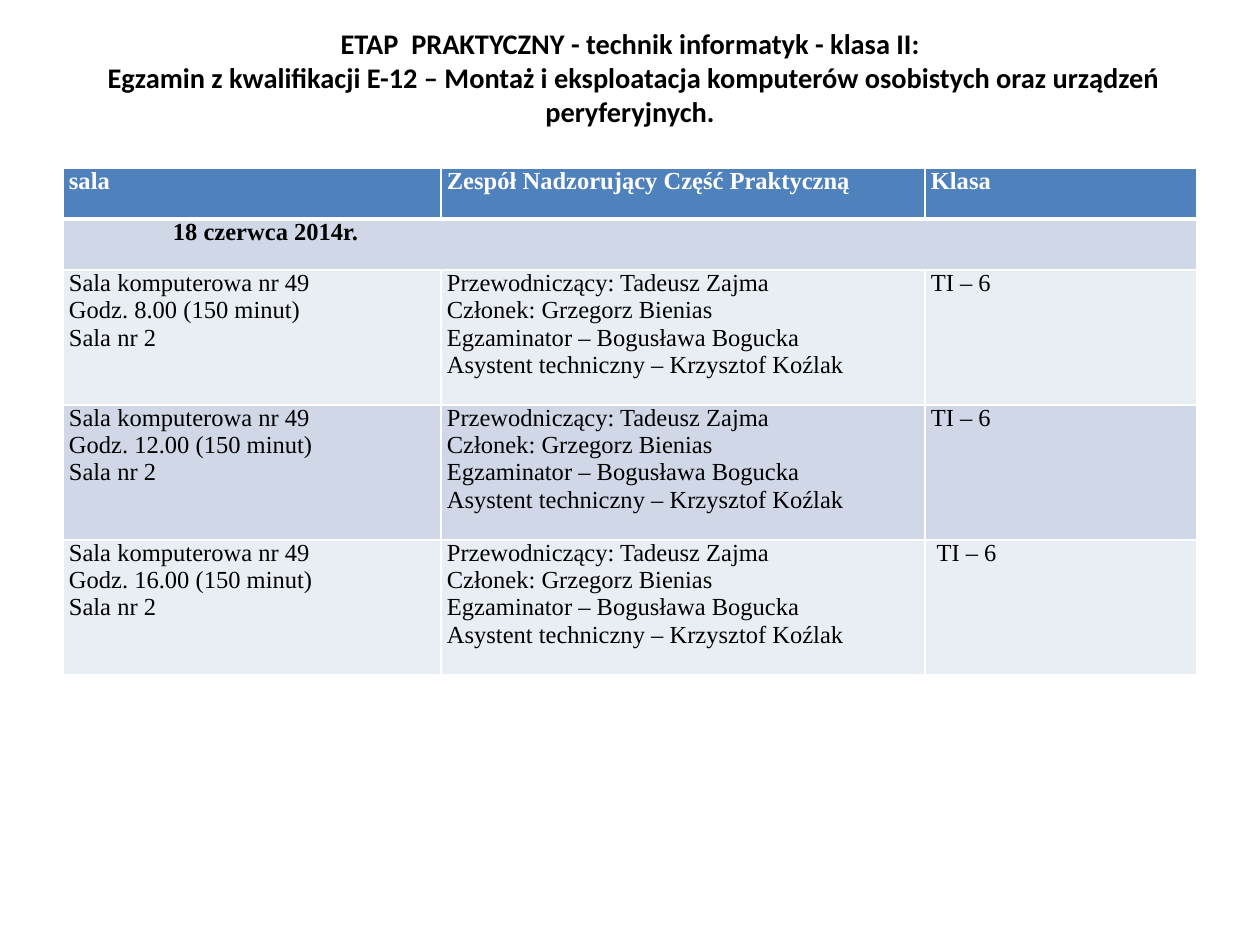
from lxml.etree import SubElement
from pptx import Presentation
from pptx.dml.color import RGBColor
from pptx.enum.text import MSO_ANCHOR, MSO_AUTO_SIZE, PP_ALIGN
from pptx.oxml.ns import qn
from pptx.util import Emu, Pt

PX = 914400 // 126  # EMU in one px
WHITE, BLACK, BLUE = "FFFFFF", "000000", "4F81BD"
DARK_BAND, LIGHT_BAND = "D0D8E8", "E9EDF4"


def px(length):
    return Emu(length * PX)


def color(value):
    return RGBColor.from_string(value)


def write(frame, text, font, size, ink=BLACK, bold=False, align=PP_ALIGN.LEFT):
    """Put each line of text in a paragraph of its own."""
    frame.text = text
    frame.word_wrap = True
    for para in frame.paragraphs:
        para.alignment = align
        for span in para.runs:
            span.font.name = font
            span.font.size = Pt(size)
            span.font.bold = bold
            span.font.color.rgb = color(ink)


def set_border(cell, side, width, ink=WHITE):
    line = SubElement(cell._tc.get_or_add_tcPr(), qn(f"a:ln{side}"), w=str(Pt(width)))
    fill = SubElement(line, qn("a:solidFill"))
    SubElement(fill, qn("a:srgbClr"), val=ink)


class ExamSlide:
    title_font, table_font = "Calibri", "Times New Roman"
    title_size, table_size = 16.2, 14

    def __init__(self, deck):
        self.page = deck.slides.add_slide(deck.slide_layouts[5])

    def title(self, text, left, top, width, height, space_below):
        box = self.page.shapes.title
        box.left, box.top, box.width, box.height = map(px, (left, top, width, height))
        frame = box.text_frame
        frame.auto_size = MSO_AUTO_SIZE.NONE
        frame.vertical_anchor = MSO_ANCHOR.MIDDLE
        frame.margin_top, frame.margin_bottom = 0, px(space_below)
        write(frame, text, self.title_font, self.title_size, bold=True, align=PP_ALIGN.CENTER)

    def table(self, left, top, columns, rows):
        frame = self.page.shapes.add_table(
            len(rows), len(columns), px(left), px(top), px(sum(columns)), px(sum(rows)))
        table = frame.table
        for column, width in zip(table.columns, columns):
            column.width = px(width)
        for row, height in zip(table.rows, rows):
            row.height = px(height)
        return table

    def cell(self, cell, text, fill, ink=BLACK, bold=False, indent=6, top_line=1, bottom_line=1):
        write(cell.text_frame, text, self.table_font, self.table_size, ink, bold)
        cell.margin_left, cell.margin_right = px(indent), px(6)
        cell.margin_top = cell.margin_bottom = 0
        for side, width in zip("LRTB", (1, 1, top_line, bottom_line)):
            set_border(cell, side, width)
        cell.fill.solid()
        cell.fill.fore_color.rgb = color(fill)


def main():
    deck = Presentation()
    deck.slide_width, deck.slide_height = px(1260), px(945)
    slide = ExamSlide(deck)

    # Title
    slide.title(
        "ETAP  PRAKTYCZNY - technik informatyk - klasa II:\n"
        " Egzamin z kwalifikacji E-12 – Montaż i eksploatacja komputerów osobistych "
        "oraz urządzeń peryferyjnych.",
        63, 38, 1134, 158, space_below=80)

    # Table header
    table = slide.table(63, 168, columns=(378, 484, 272), rows=(51, 51, 135, 135, 135))
    headings = ("sala", "Zespół Nadzorujący Część Praktyczną", "Klasa")
    for column, heading in enumerate(headings):
        slide.cell(table.cell(0, column), heading, BLUE, WHITE, bold=True, bottom_line=3)

    # Date across all columns
    table.cell(1, 0).merge(table.cell(1, 2))
    for column, date in enumerate(("18 czerwca 2014r.", "", "")):
        slide.cell(table.cell(1, column), date, DARK_BAND, bold=True, indent=110, top_line=3)

    # Exam sessions
    team = ("Przewodniczący: Tadeusz Zajma\nCzłonek: Grzegorz Bienias\n"
            "Egzaminator – Bogusława Bogucka\nAsystent techniczny – Krzysztof Koźlak")
    sessions = (("8.00", "TI – 6"), ("12.00", "TI – 6"), ("16.00", " TI – 6"))
    for row, (hour, group) in enumerate(sessions, start=2):
        room = f"Sala komputerowa nr 49\nGodz. {hour} (150 minut)\nSala nr 2"
        band = DARK_BAND if row % 2 else LIGHT_BAND
        for column, text in enumerate((room, team, group)):
            slide.cell(table.cell(row, column), text, band)

    deck.save("out.pptx")


if __name__ == "__main__":
    main()
